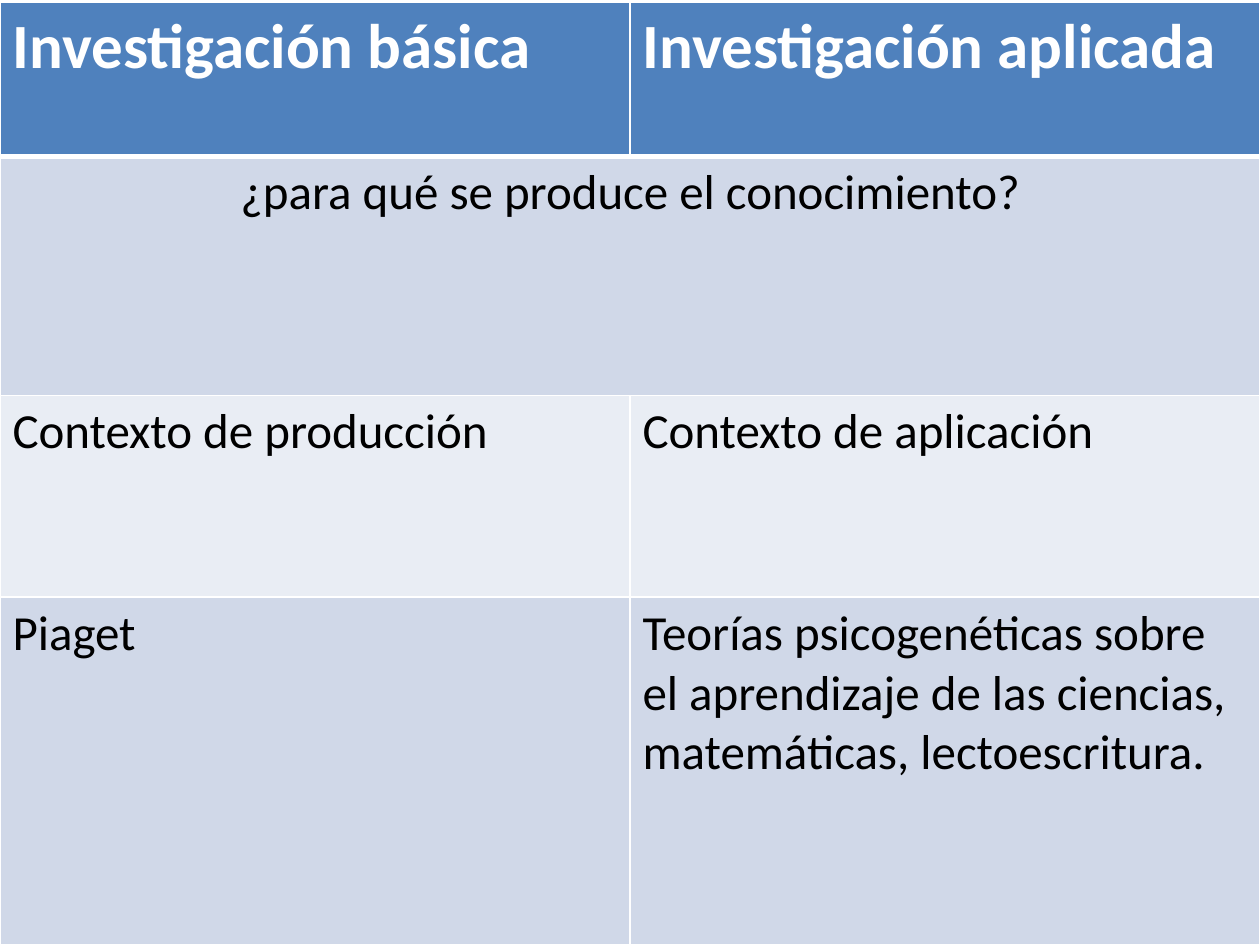
from lxml import etree
from pptx import Presentation
from pptx.dml.color import RGBColor
from pptx.enum.text import PP_ALIGN
from pptx.oxml.ns import qn
from pptx.util import Inches, Pt

LEFT, CENTER = PP_ALIGN.LEFT, PP_ALIGN.CENTER
COLORS = {
    "header": "4F81BD",
    "band_dark": "D0D8E8",
    "band_light": "E9EDF4",
    "line": "FFFFFF",
    "header_text": "FFFFFF",
    "body_text": "000000",
}
COLUMN_WIDTHS = [5, 5]
ROW_HEIGHTS = [1.22, 1.9, 1.6, 2.76]
ROWS = [
    ["Investigación básica", "Investigación aplicada"],
    ["¿para qué se produce el conocimiento?"],
    ["Contexto de producción", "Contexto de aplicación"],
    ["Piaget", "Teorías psicogenéticas sobre el aprendizaje de las ciencias, "
               "matemáticas, lectoescritura."],
]


class TablePage:
    font_name = "Calibri"
    header_size, body_size = 36, 28
    thin_line, header_line = 1, 3

    def __init__(self, page):
        self.page = page

    def add_table(self, left, top, rows, widths, heights):
        """Draw a banded table; a row with a single text spans all columns."""
        table = self.page.shapes.add_table(
            len(rows), len(widths), Inches(left), Inches(top),
            Inches(sum(widths)), Inches(sum(heights))).table
        for column, width in zip(table.columns, widths):
            column.width = Inches(width)
        for index, (texts, height) in enumerate(zip(rows, heights)):
            table.rows[index].height = Inches(height)
            for position in range(len(widths)):
                self.style_cell(table.cell(index, position), index)
            spans = len(texts) == 1
            if spans:
                table.cell(index, 0).merge(table.cell(index, len(widths) - 1))
            for position, text in enumerate(texts):
                self.set_text(table.cell(index, position), text, index == 0,
                              CENTER if spans else LEFT)

    def style_cell(self, cell, row):
        top = self.header_line if row == 1 else self.thin_line
        bottom = self.header_line if row == 0 else self.thin_line
        self.add_borders(cell, L=self.thin_line, R=self.thin_line, T=top, B=bottom)
        band = "header" if row == 0 else "band_dark" if row % 2 else "band_light"
        cell.fill.solid()
        cell.fill.fore_color.rgb = RGBColor.from_string(COLORS[band])

    def add_borders(self, cell, **widths):
        properties = cell._tc.get_or_add_tcPr()
        for side, width in widths.items():
            line = etree.SubElement(properties, qn(f"a:ln{side}"), w=str(Pt(width)))
            fill = etree.SubElement(line, qn("a:solidFill"))
            etree.SubElement(fill, qn("a:srgbClr"), val=COLORS["line"])

    def set_text(self, cell, text, is_header, alignment):
        para = cell.text_frame.paragraphs[0]
        para.text = text
        para.alignment = alignment
        font = para.font
        font.name = self.font_name
        font.size = Pt(self.header_size if is_header else self.body_size)
        font.bold = is_header
        color = COLORS["header_text" if is_header else "body_text"]
        font.color.rgb = RGBColor.from_string(color)


def main():
    deck = Presentation()
    deck.slide_width, deck.slide_height = Inches(10), Inches(7.5)
    page = TablePage(deck.slides.add_slide(deck.slide_layouts[6]))
    page.add_table(0, 0.02, ROWS, COLUMN_WIDTHS, ROW_HEIGHTS)
    deck.save("out.pptx")


if __name__ == "__main__":
    main()
